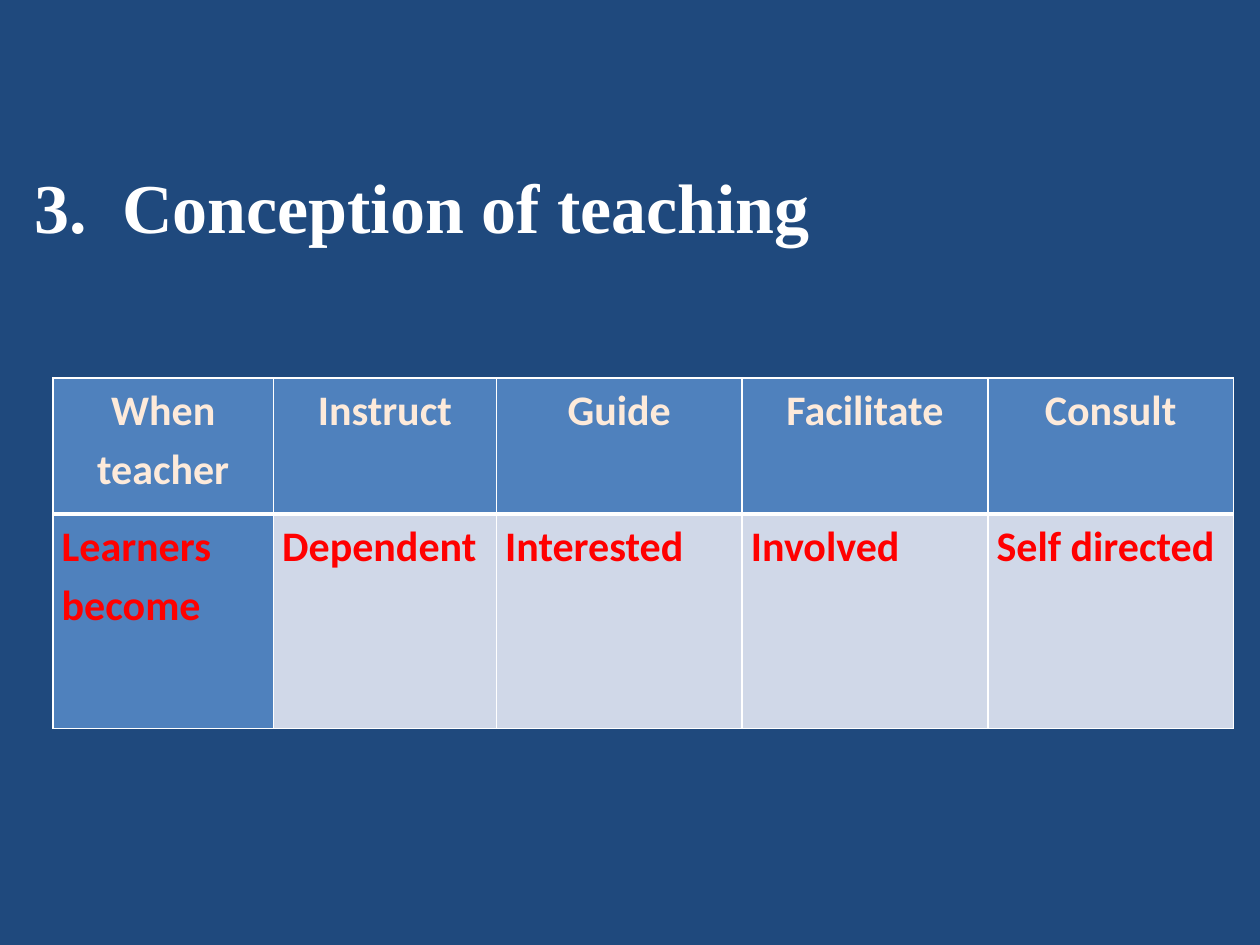
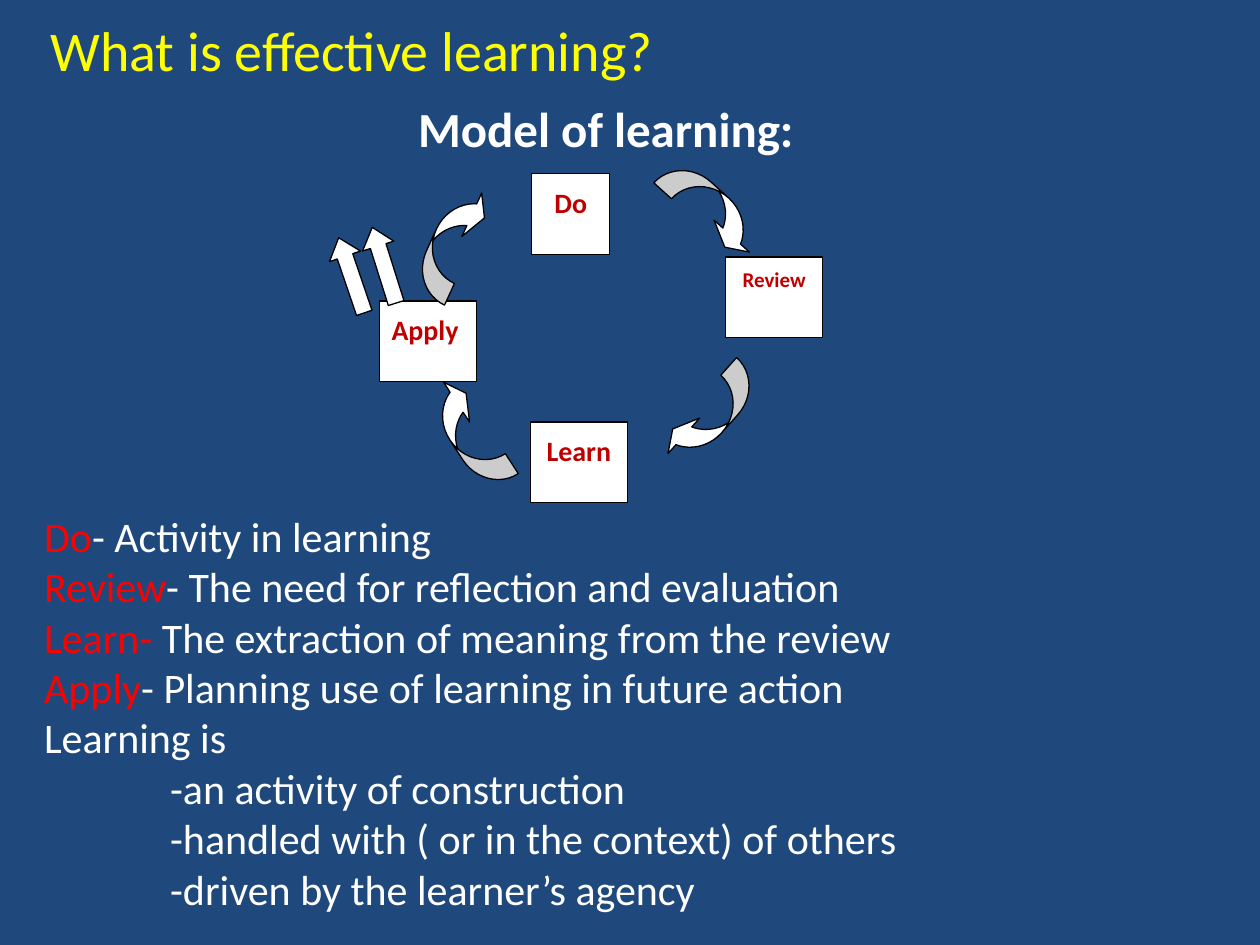
from lxml import etree
from pptx import Presentation
from pptx import util as u
from pptx.dml.color import RGBColor
from pptx.enum import shapes, text
from pptx.oxml.ns import qn

COLS, ROWS = 100, 75
NAVY, WHITE, BLACK = "1F497D", "FFFFFF", "000000"
YELLOW, RED, DARK = "FFFF00", "FF0000", "C00000"
BLUE, PALE, CREAM = "4F81BD", "D0D8E8", "FDEADA"
SANS, SERIF = "Calibri", "Times New Roman"
LEFT, MID = text.PP_ALIGN.LEFT, text.PP_ALIGN.CENTER
TOP, CENTRE = text.MSO_ANCHOR.TOP, text.MSO_ANCHOR.MIDDLE
KIND = shapes.MSO_SHAPE

HEADS = ["When teacher", "Instruct", "Guide", "Facilitate", "Consult"]
STATES = ["Learners become", "Dependent", "Interested", "Involved", "Self directed"]
WIDTHS = [17.5, 17.7, 19.5, 19.5, 19.5]
# label, column, row, width, size, alignment
STEPS = [("Do", 16.2, 2.8, 6.2, 16, MID), ("Review", 31.6, 9.4, 7.7, 12, MID),
         ("Learn", 16.1, 22.5, 7.7, 16, MID), ("Apply", 4.1, 12.9, 7.7, 16, LEFT)]
# column, row, turn in degrees
CURVES = [(28.9, 0.8, 312.2), (9.7, 18.7, 147), (28.9, 17.2, 41.8), (8.3, 3.5, 204.6)]
EXITS = [(3.2, 6.9, 342.5), (0.6, 7.7, 341.2)]
TERMS = [("Do", "- Activity in learning"),
         ("Review", "- The need for reflection and evaluation"),
         ("Learn-", " The extraction of meaning from the review"),
         ("Apply", "- Planning use of learning in future action")]
TRAITS = ["-an activity of construction",
          "-handled with ( or in the context) of others",
          "-driven by the learner’s agency"]

prs = Presentation()
prs.slide_width, prs.slide_height = u.Inches(10), u.Inches(7.5)


def rgb(hue):
    return RGBColor.from_string(hue)


def across(n):
    return round(prs.slide_width * n / COLS)


def down(n):
    return round(prs.slide_height * n / ROWS)


def place(col, row, wide, high):
    return across(col), down(row), across(wide), down(high)


def apply(item, form):
    for key, value in form.items():
        setattr(item, key, value)


def write(para, words, size, hue, bold=False, face=SANS):
    run = para.add_run()
    run.text = words
    apply(run.font, {"size": u.Pt(size), "bold": bold, "name": face})
    run.font.color.rgb = rgb(hue)


def move(shape, box, anchor=TOP):
    """Set the box of a text holder and return its first paragraph."""
    apply(shape, dict(zip(("left", "top", "width", "height"), place(*box))))
    apply(shape.text_frame, {"word_wrap": True, "vertical_anchor": anchor,
                             "auto_size": text.MSO_AUTO_SIZE.NONE})
    shape.text_frame.paragraphs[0].alignment = LEFT
    return shape.text_frame.paragraphs[0]


def indent(para, left, first, mark, **marks):
    props = para._p.get_or_add_pPr()
    props.set("marL", str(across(left)))
    props.set("indent", str(across(first)))
    etree.SubElement(props, qn("a:" + mark), **marks)


def border(cell, edges):
    props = cell._tc.get_or_add_tcPr()
    for side, width in edges.items():
        line = etree.SubElement(props, qn("a:ln" + side), w=str(u.Pt(width)))
        fill = etree.SubElement(line, qn("a:solidFill"))
        etree.SubElement(fill, qn("a:srgbClr"), val=WHITE)


def draw(slide, kind, box, turn=0, adjust=()):
    shape = slide.shapes.add_shape(kind, *place(*box))
    shape.shadow.inherit = False
    shape.rotation = turn
    for i, value in enumerate(adjust):
        shape.adjustments[i] = value
    shape.fill.solid()
    shape.fill.fore_color.rgb = rgb(WHITE)
    shape.line.color.rgb = rgb(BLACK)
    shape.line.width = u.Pt(0.75)
    return shape


def grid(slide, col, row):
    heights = [10.8, 17]
    frame = slide.shapes.add_table(2, len(HEADS), *place(col, row, sum(WIDTHS), sum(heights)))
    table = frame.table
    for part, wide in zip(table.columns, WIDTHS):
        part.width = across(wide)
    for r, line in enumerate((HEADS, STATES)):
        table.rows[r].height = down(heights[r])
        for c, words in enumerate(line):
            cell = table.cell(r, c)
            apply(cell, {"margin_left": across(0.7), "margin_right": across(0.7),
                         "margin_top": 0, "margin_bottom": 0})
            border(cell, {"L": 1, "R": 1, "T": 3 if r else 1, "B": 1 if r else 3})
            cell.fill.solid()
            cell.fill.fore_color.rgb = rgb(PALE if r and c else BLUE)
            para = cell.text_frame.paragraphs[0]
            apply(para, {"alignment": LEFT if r else MID, "line_spacing": 1.15})
            write(para, words, 24, RED if r else CREAM, True)


def cycle(slide, col, row):
    for words, x, y, wide, size, align in STEPS:
        shape = draw(slide, KIND.RECTANGLE, (col + x, row + y, wide, 6.4))
        shape.text_frame.vertical_anchor = TOP
        para = shape.text_frame.paragraphs[0]
        apply(para, {"alignment": align, "line_spacing": 1.15, "space_after": u.Pt(10)})
        write(para, words, size, DARK, True)
    for x, y, turn in CURVES:
        draw(slide, KIND.CURVED_LEFT_ARROW, (col + x, row + y, 3.1, 9.5), turn,
             (0.61, 1.22, 0.33))
    for x, y, turn in EXITS:
        draw(slide, KIND.UP_ARROW, (col + x, row + y, 2.6, 6.3), turn, (0.5, 0.6))


def notions(body, box):
    """Fill the list of terms and of what learning is."""
    lines = [(0, [(term, RED), (rest, WHITE)]) for term, rest in TERMS]
    lines.append((0, [("Learning is", WHITE)]))
    lines += [(10, [(trait, WHITE)]) for trait in TRAITS]
    para = move(body, box)
    for i, (left, runs) in enumerate(lines):
        if i:
            para = body.text_frame.add_paragraph()
        para.space_before = u.Pt(0)
        indent(para, left, 0, "buNone")
        for words, hue in runs:
            write(para, words, 24, hue)


def teaching():
    slide = prs.slides.add_slide(prs.slide_layouts[5])
    grid(slide, 4.2, 30)
    para = move(slide.shapes.title, (1.7, 12.5, 83.3, 7.7))
    indent(para, 7, -7, "buAutoNum", type="arabicPeriod", startAt="3")
    write(para, "Conception of teaching", 40, WHITE, True, SERIF)


def learning():
    slide = prs.slides.add_slide(prs.slide_layouts[1])
    para = move(slide.shapes.title, (3, 0.8, 66.7, 6.2), CENTRE)
    write(para, "What is effective learning?", 32, YELLOW)
    label = slide.shapes.add_textbox(0, 0, 0, 0)
    write(move(label, (32.2, 7.3, 33.3, 5.7)), "Model of learning:", 28, WHITE, True)
    cycle(slide, 26, 11)
    notions(slide.placeholders[1], (2.5, 40, 90, 33.3))


def main():
    back = prs.slide_master.background.fill
    back.solid()
    back.fore_color.rgb = rgb(NAVY)
    teaching()
    learning()
    prs.save("out.pptx")


if __name__ == "__main__":
    main()
